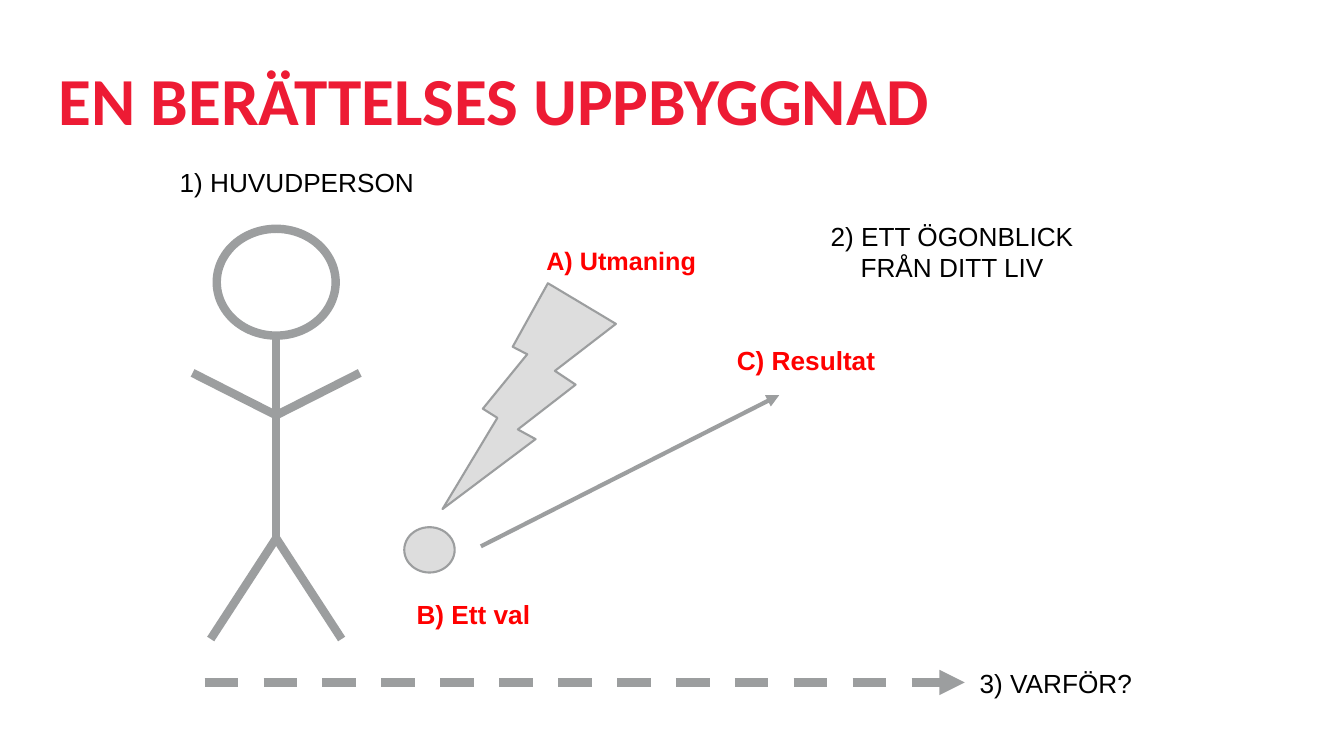
from pptx import Presentation
from pptx.dml.color import RGBColor
from pptx.enum.dml import MSO_LINE
from pptx.enum.shapes import MSO_CONNECTOR, MSO_SHAPE
from pptx.enum.text import MSO_ANCHOR, MSO_AUTO_SIZE, PP_ALIGN
from pptx.oxml.ns import qn
from pptx.util import Inches, Pt
from lxml import etree

STRAIGHT = MSO_CONNECTOR.STRAIGHT
OVAL, BOLT, CHOICE = MSO_SHAPE.OVAL, MSO_SHAPE.LIGHTNING_BOLT, MSO_SHAPE.FLOWCHART_CONNECTOR
DASH = MSO_LINE.DASH
MIDDLE, BOTTOM = MSO_ANCHOR.MIDDLE, MSO_ANCHOR.BOTTOM
LEFT, CENTER = PP_ALIGN.LEFT, PP_ALIGN.CENTER
NO_FIT = MSO_AUTO_SIZE.NONE

COLORS = {name: RGBColor.from_string(value) for name, value in {
    "title": "ED1B34", "stage": "000000", "step": "FF0000",
    "stroke": "9C9E9F", "fill": "DDDDDD"}.items()}

prs = Presentation()
prs.slide_width, prs.slide_height = Inches(13.33), Inches(7.5)
slide = prs.slides.add_slide(prs.slide_layouts[5])


def percent(x1, y1, x2, y2):
    """Turn percentages of the slide's width and height into lengths."""
    width, height = prs.slide_width, prs.slide_height
    return [round(share * side / 100)
            for share, side in zip((x1, y1, x2, y2), (width, height, width, height))]


def format_text(frame, text, anchor, align, font_name, size, color, bold):
    """Fill a text frame with one evenly formatted paragraph."""
    frame.word_wrap, frame.auto_size, frame.vertical_anchor = True, NO_FIT, anchor
    frame.margin_left = frame.margin_right = Inches(0.13)
    frame.margin_top = frame.margin_bottom = Inches(0.13)
    frame.text = text
    paragraph = frame.paragraphs[0]
    paragraph.alignment = align
    font = paragraph.font
    font.name, font.size, font.bold = font_name, Pt(size), bold
    font.color.rgb = COLORS[color]
    return paragraph


# Title
title = slide.shapes.title
title.left, title.top, title.width, title.height = percent(3.38, 4.13, 93.15, 15.87)
heading = format_text(title.text_frame, "EN BERÄTTELSES UPPBYGGNAD",
                      BOTTOM, LEFT, "Calibri", 48, "title", True)
heading.line_spacing = 0.8

# Head of the main character, challenge bolt and choice
for outline, box, weight, filled in [
    (OVAL, (16.13, 30.27, 8.85, 14.13), 6, False),
    (BOLT, (32.93, 37.47, 12.9, 29.87), 1.5, True),
    (CHOICE, (30.08, 69.73, 3.75, 6), 1.5, True),
]:
    part = slide.shapes.add_shape(outline, *percent(*box))
    part.shadow.inherit = False
    part.line.color.rgb, part.line.width = COLORS["stroke"], Pt(weight)
    if filled:
        part.fill.solid()
        part.fill.fore_color.rgb = COLORS["fill"]
    else:
        part.fill.background()
    if outline == BOLT:
        part._element.spPr.find(qn("a:xfrm")).set("flipH", "1")

# Body, mirrored arms and legs, then the two arrows
SPINE, NECK, SHOULDER, HIP = 20.55, 44.4, 54.93, 71.2
strokes = [((SPINE, NECK, SPINE, HIP), 6, False, False)]
for side in (-1, 1):
    strokes.append(((SPINE, SHOULDER, SPINE + side * 6.22, 49.33), 6, False, False))
    strokes.append(((SPINE, HIP, SPINE + side * 4.87, 84.53), 6, False, False))
strokes.append(((15.23, 90.27, 71.78, 90.27), 6, True, True))
strokes.append(((35.78, 72.27, 57.98, 52.27), 3, False, True))

for ends, weight, dashed, arrow in strokes:
    stroke = slide.shapes.add_connector(STRAIGHT, *percent(*ends))
    stroke.line.color.rgb, stroke.line.width = COLORS["stroke"], Pt(weight)
    if dashed:
        stroke.line.dash_style = DASH
    if arrow:
        etree.SubElement(stroke.line._get_or_add_ln(), qn("a:tailEnd"), type="triangle")
    etree.SubElement(stroke._element.spPr, qn("a:effectLst"))

# Stages of the story in black, steps of the moment in red
for text, left, top, width, size, color, indent in [
    ("1) HUVUDPERSON", 11.25, 21.07, 21.68, 18.7, "stage", 0),
    ("2) ETT ÖGONBLICK FRÅN DITT LIV", 60, 30.27, 21.68, 18.7, "stage", 0),
    ("3) VARFÖR?", 70.2, 87.33, 16.73, 18.7, "stage", 0),
    ("A) Utmaning", 34.65, 31.47, 18.98, 18, "step", 0.67),
    ("B) Ett val", 24.38, 78.27, 21.68, 18.7, "step", 0),
    ("C) Resultat", 49.13, 44.67, 21.68, 18.7, "step", 0),
]:
    label = slide.shapes.add_textbox(*percent(left, top, width, 6))
    caption = format_text(label.text_frame, text, MIDDLE, LEFT if indent else CENTER,
                          "Arial", size, color, color == "step")
    if indent:
        caption._p.get_or_add_pPr().set("marL", str(Inches(indent)))

prs.save("out.pptx")
